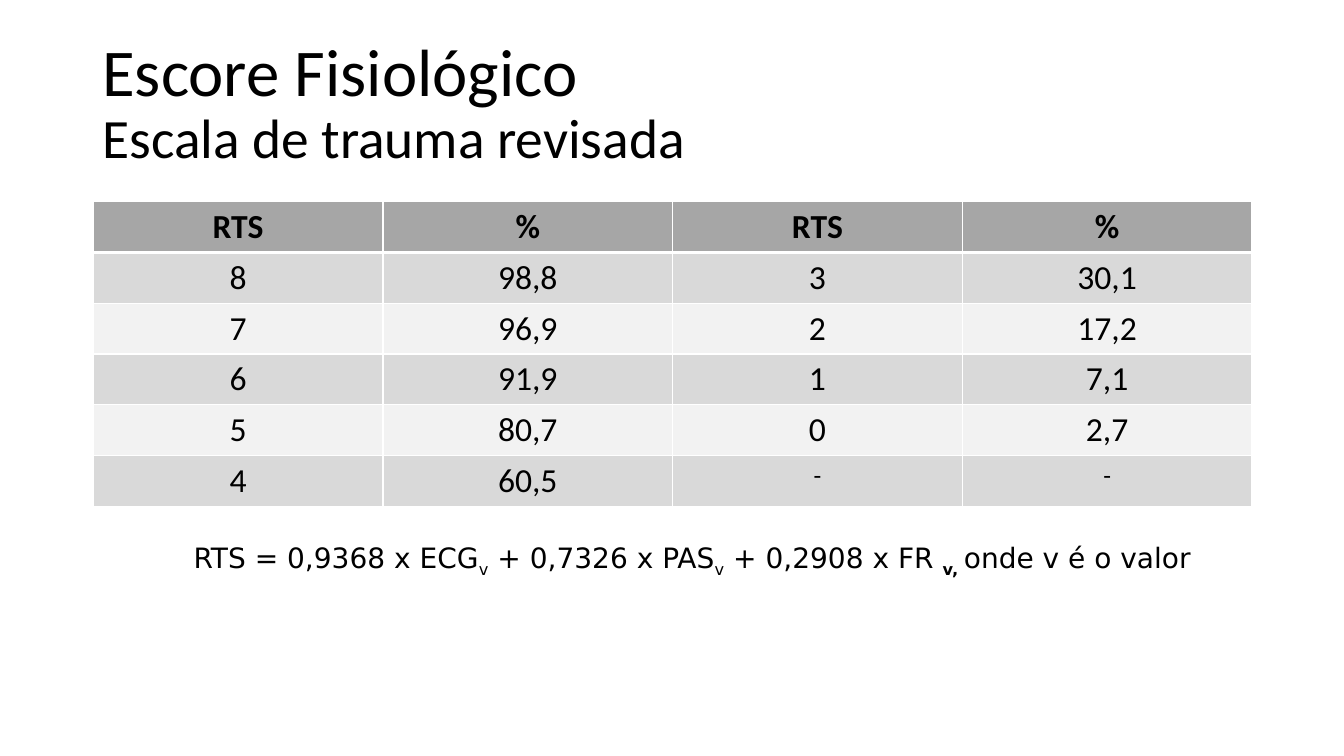
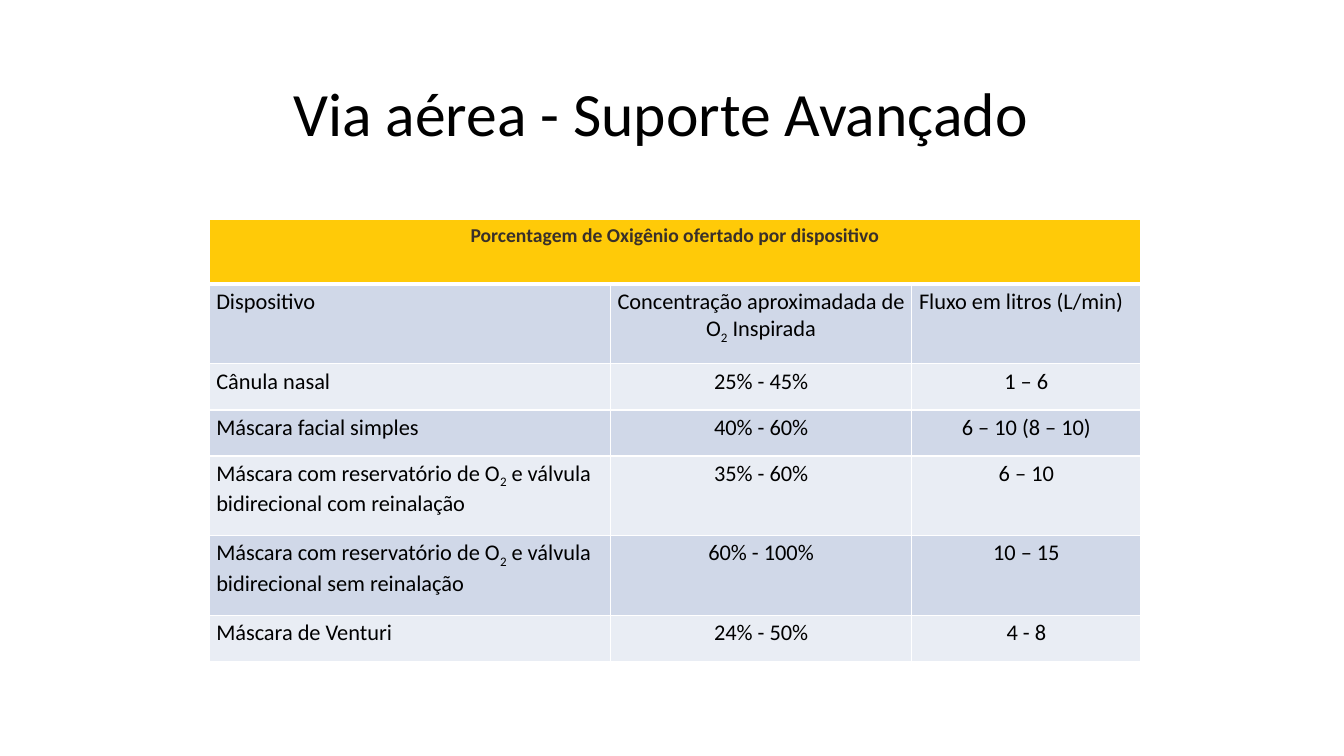
from lxml.etree import SubElement
from pptx import Presentation
from pptx.dml.color import RGBColor
from pptx.enum.text import MSO_ANCHOR, PP_ALIGN
from pptx.oxml.ns import qn
from pptx.util import Cm, Pt

BLACK, WHITE = "000000", "FFFFFF"
TITLE_FONT = {"name": "Calibri", "size": Pt(44)}
SUBTITLE_FONT = {"name": "Calibri", "size": Pt(39.6)}
FORMULA_FONT = {"name": "DejaVu Sans", "size": Pt(20)}
SUBSCRIPT = {"baseline": -25000}
CENTER, LEFT = PP_ALIGN.CENTER, PP_ALIGN.LEFT


def color(value):
    return RGBColor.from_string(value)


def apply(target, values):
    for name, value in values.items():
        setattr(target, name, value)


def write(paragraph, content, font, alignment=LEFT, text_color=BLACK):
    """Fill a paragraph from a string or a list of strings and (text, changes) pairs."""
    paragraph.alignment = alignment
    for part in [content] if isinstance(content, str) else content:
        text, changes = (part, {}) if isinstance(part, str) else part
        values = {"bold": False, **font, **changes}
        baseline = values.pop("baseline", None)
        run = paragraph.add_run()
        run.text = text
        apply(run.font, values)
        run.font.color.rgb = color(text_color)
        if baseline:
            run.font._element.set("baseline", str(baseline))


def add_text(slide, left, top, width, height, lines, alignment=LEFT, line_spacing=1.0, **frame):
    """Add a text box; lines holds (content, font) pairs, one a paragraph."""
    box = slide.shapes.add_textbox(Cm(left), Cm(top), Cm(width), Cm(height))
    text_frame = box.text_frame
    apply(text_frame, {"word_wrap": True, **frame})
    for index, (content, font) in enumerate(lines):
        paragraph = text_frame.add_paragraph() if index else text_frame.paragraphs[0]
        paragraph.line_spacing = line_spacing
        write(paragraph, content, font, alignment)


def set_borders(cell, row_index):
    """Draw white cell borders, heavier between the header and the body."""
    widths = {"lnL": 1, "lnR": 1,
              "lnT": 3 if row_index == 1 else 1,
              "lnB": 3 if row_index == 0 else 1}
    properties = cell._tc.get_or_add_tcPr()
    for tag, width in widths.items():
        line = SubElement(properties, qn(f"a:{tag}"), w=str(Pt(width)))
        fill = SubElement(line, qn("a:solidFill"))
        SubElement(fill, qn("a:srgbClr"), val=WHITE)


def add_table(slide, left, top, column_widths, row_heights, rows, style):
    shape = slide.shapes.add_table(len(rows), len(column_widths), Cm(left), Cm(top),
                                   Cm(sum(column_widths)), Cm(sum(row_heights)))
    table = shape.table
    apply(table, {"first_row": False, "horz_banding": False})
    for column, width in zip(table.columns, column_widths):
        column.width = Cm(width)
    for row_index, (row, height, contents) in enumerate(zip(table.rows, row_heights, rows)):
        row.height = Cm(height)
        is_header = row_index == 0
        fill_color = style["header_fill"] if is_header else style["bands"][(row_index - 1) % 2]
        for cell, content, alignment in zip(row.cells, contents, style["alignments"]):
            apply(cell, style["margins"])
            set_borders(cell, row_index)
            cell.fill.solid()
            cell.fill.fore_color.rgb = color(fill_color)
            write(cell.text_frame.paragraphs[0], content,
                  style["header_font"] if is_header else style["font"],
                  CENTER if is_header else alignment,
                  style["header_color"] if is_header else BLACK)
    return table


def add_score_slide(slide):
    add_text(slide, 2.33, 1.02, 29.21, 3.68,
             [("Escore Fisiológico", {**TITLE_FONT, "size": Pt(47.7)}),
              ("Escala de trauma revisada", SUBTITLE_FONT)],
             line_spacing=0.9, vertical_anchor=MSO_ANCHOR.MIDDLE, margin_bottom=Cm(0.58))
    font = {"name": "Calibri", "size": Pt(24)}
    dash = [("-", {"size": Pt(18)})]
    rows = [
        ["RTS", "%", "RTS", "%"],
        ["8", "98,8", "3", "30,1"],
        ["7", "96,9", "2", "17,2"],
        ["6", "91,9", "1", "7,1"],
        ["5", "80,7", "0", "2,7"],
        ["4", "60,5", dash, dash],
    ]
    style = {"font": font, "header_font": {**font, "bold": True}, "header_color": BLACK,
             "header_fill": "A6A6A6", "bands": ("D9D9D9", "F2F2F2"),
             "alignments": [CENTER] * 4, "margins": {}}
    add_table(slide, 2.35, 5.08, [7.3] * 4, [1.28] * len(rows), rows, style)
    formula = ["RTS = 0,9368 x ECG", ("v", SUBSCRIPT), " + 0,7326 x PAS", ("v", SUBSCRIPT),
               " + 0,2908 x FR ", ("v, ", {**SUBSCRIPT, "bold": True}), "onde v é o valor"]
    add_text(slide, 2.84, 13.49, 29.21, 1.12, [(formula, FORMULA_FONT)], CENTER)


def add_airway_slide(slide):
    add_text(slide, 7.14, 1.73, 20.19, 1.96, [("Via aérea - Suporte Avançado", TITLE_FONT)],
             margin_top=Cm(0.15), margin_bottom=Cm(0.15))
    font = {"name": "Calibri", "size": Pt(16)}
    oxygen = ["O", ("2", SUBSCRIPT)]
    reservoir = ["Máscara com reservatório de ", *oxygen]
    rows = [
        ["Porcentagem de Oxigênio ofertado por dispositivo", "", ""],
        ["Dispositivo", ["Concentração aproximadada de ", *oxygen, " Inspirada"],
         "Fluxo em litros (L/min)"],
        ["Cânula nasal", "25% - 45%", "1 – 6"],
        ["Máscara facial simples", "40% - 60%", "6 – 10 (8 – 10)"],
        [[*reservoir, " e válvula bidirecional com reinalação"], "35% - 60%", "6 – 10"],
        [[*reservoir, " e válvula bidirecional sem reinalação"], "60% - 100%", "10 – 15"],
        ["Máscara de Venturi", "24% - 50%", "4 - 8"],
    ]
    style = {"font": font, "header_font": {**font, "size": Pt(14), "bold": True},
             "header_color": "39302A", "header_fill": "FFCA08", "bands": ("D0D8E8", "E9EDF4"),
             "alignments": [LEFT, CENTER, CENTER],
             "margins": {"margin_left": Cm(0.18), "margin_right": Cm(0.18),
                         "margin_top": Cm(0.1), "margin_bottom": Cm(0.1)}}
    single, double = 1.16, 2.01
    table = add_table(slide, 5.27, 5.54, [10.11, 7.6, 5.77],
                      [1.62, double, single, single, double, double, single], rows, style)
    table.cell(0, 0).merge(table.cell(0, 2))
    table.cell(1, 2).text_frame.paragraphs[0].alignment = LEFT


def main():
    presentation = Presentation()
    apply(presentation, {"slide_width": Cm(33.87), "slide_height": Cm(19.05)})
    for build in (add_score_slide, add_airway_slide):
        build(presentation.slides.add_slide(presentation.slide_layouts[6]))
    presentation.save("out.pptx")


if __name__ == "__main__":
    main()
